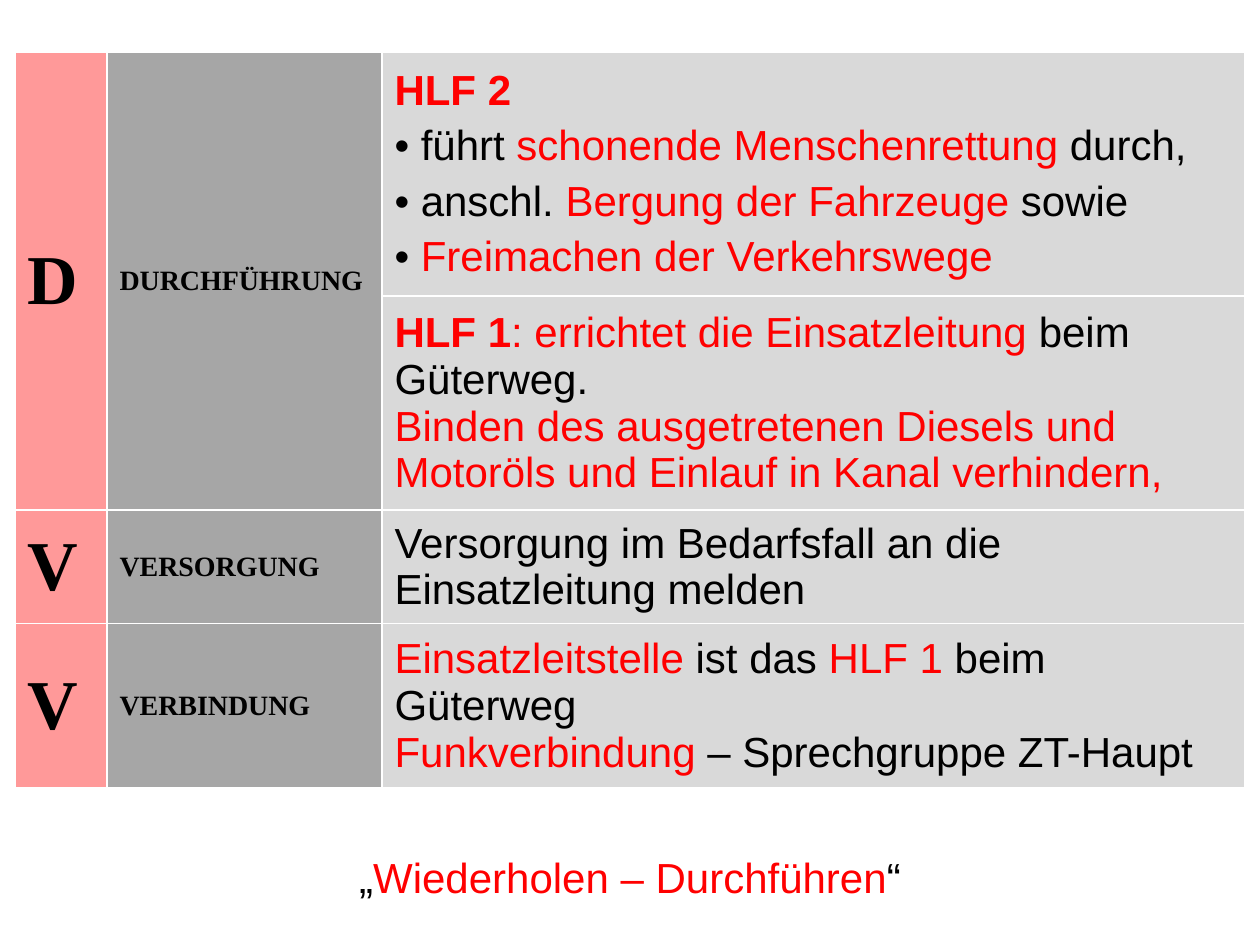
"""Build a slide with the execution, supply and communication parts of a fire service order."""
from dataclasses import dataclass, field

import pptx
import pptx.dml.color
import pptx.enum.text
import pptx.oxml
import pptx.oxml.ns
import pptx.util

EMU_PER_PX = 914400 / 126
COLORS = {
    "black": "000000",
    "red": "FF0000",
    "letter": "FF9999",
    "heading": "A6A6A6",
    "body": "D9D9D9",
    "border": "FFFFFF",
}
COL_WIDTHS = (92, 275, 863)
BORDER_PT = 1


@dataclass
class Run:
    text: str
    color: str = "black"
    bold: bool = False


@dataclass
class Para:
    runs: list[Run]
    bullet: bool = False
    before: float = 0


@dataclass
class Row:
    height: int
    paras: list[Para]
    letter: str = ""
    heading: str = ""
    span: int = 1


@dataclass
class Order:
    rows: list[Row] = field(default_factory=list)


ORDER = Order([
    Row(244, [
        Para([Run("HLF 2", "red", True)], before=4.8),
        Para([Run(" führt"), Run(" schonende Menschenrettung", "red"), Run(" durch,")], True, 4.8),
        Para([Run(" anschl. "), Run("Bergung der Fahrzeuge", "red"), Run(" sowie")], True, 4.8),
        Para([Run(" "), Run("Freimachen der Verkehrswege", "red")], True, 4.8),
    ], "D", "DURCHFÜHRUNG", 2),
    Row(214, [
        Para([
            Run("HLF 1", "red", True),
            Run(": errichtet die Einsatzleitung ", "red"),
            Run("beim Güterweg."),
            Run("\n"),
            Run("Binden des ausgetretenen Diesels und Motoröls und Einlauf in Kanal verhindern,", "red"),
        ]),
    ]),
    Row(113, [
        Para([Run("Versorgung im Bedarfsfall an die Einsatzleitung melden")]),
    ], "V", "VERSORGUNG"),
    Row(164, [
        Para([Run("Einsatzleitstelle", "red"), Run(" ist das "), Run("HLF 1 ", "red"),
              Run("beim Güterweg")], before=4.8),
        Para([Run("Funkverbindung ", "red"), Run("– Sprechgruppe ZT-Haupt")]),
    ], "V", "VERBINDUNG"),
])
CLOSING = [Run("„"), Run("Wiederholen – Durchführen", "red"), Run("“")]


def px(n: int) -> int:
    """Turn pixels into EMU."""
    return round(n * EMU_PER_PX)


def rgb(name: str) -> pptx.dml.color.RGBColor:
    """Look up a named colour."""
    return pptx.dml.color.RGBColor.from_string(COLORS[name])


def add_text(p, text: str, *, size: int = 24, font: str = "Arial",
             color: str = "black", bold: bool = False) -> None:
    """Append a formatted run, or a line break, to a paragraph."""
    if text == "\n":
        p.add_line_break()
        return
    r = p.add_run()
    r.text = text
    r.font.size = pptx.util.Pt(size)
    r.font.name = font
    r.font.bold = bold
    r.font.color.rgb = rgb(color)


def add_bullet(p) -> None:
    """Give a paragraph a round bullet without indent."""
    pPr = p._p.get_or_add_pPr()
    pPr.set("marL", "0")
    pPr.set("indent", "0")
    for tag, attr, value in (("a:buFont", "typeface", "Arial"), ("a:buChar", "char", "•")):
        el = pptx.oxml.ns.qn(tag)
        pPr.append(pPr.makeelement(el, {attr: value}))


def write_paras(tf, paras: list[Para]) -> None:
    """Fill a text frame with paragraphs."""
    for i, para in enumerate(paras):
        p = tf.add_paragraph() if i else tf.paragraphs[0]
        p.space_before = pptx.util.Pt(para.before)
        if para.bullet:
            add_bullet(p)
        for run in para.runs:
            add_text(p, run.text, color=run.color, bold=run.bold)


def style_cell(cell, fill: str) -> None:
    """Set the borders, fill and anchor of a cell."""
    tcPr = cell._tc.get_or_add_tcPr()
    for side in ("lnL", "lnR", "lnT", "lnB"):
        tcPr.append(pptx.oxml.parse_xml(
            f'<a:{side} {pptx.oxml.ns.nsdecls("a")} w="{pptx.util.Pt(BORDER_PT)}"><a:solidFill>'
            f'<a:srgbClr val="{COLORS["border"]}"/></a:solidFill></a:{side}>'))
    cell.fill.solid()
    cell.fill.fore_color.rgb = rgb(fill)
    cell.vertical_anchor = pptx.enum.text.MSO_ANCHOR.MIDDLE


def add_order(slide, order: Order, x: int, y: int) -> None:
    """Draw the order as a table."""
    height = sum(row.height for row in order.rows)
    tbl = slide.shapes.add_table(len(order.rows), len(COL_WIDTHS), px(x), px(y),
                                 px(sum(COL_WIDTHS)), px(height)).table
    tbl.first_row = tbl.horz_banding = False
    for col, width in zip(tbl.columns, COL_WIDTHS):
        col.width = px(width)
    for i, row in enumerate(order.rows):
        tbl.rows[i].height = px(row.height)
        for j, fill in enumerate(("letter", "heading", "body")):
            style_cell(tbl.cell(i, j), fill)
        for j, (text, size) in enumerate(((row.letter, 40), (row.heading, 16))):
            if text:
                cell = tbl.cell(i, j)
                add_text(cell.text_frame.paragraphs[0], text, size=size,
                         font="Times New Roman", bold=True)
                if row.span > 1:
                    cell.merge(tbl.cell(i + row.span - 1, j))
        write_paras(tbl.cell(i, 2).text_frame, row.paras)


def add_closing(slide, runs: list[Run], x: int, y: int, w: int, h: int) -> None:
    """Draw the centred closing line."""
    tf = slide.shapes.add_textbox(px(x), px(y), px(w), px(h)).text_frame
    tf.word_wrap = True
    write_paras(tf, [Para(runs)])
    tf.paragraphs[0].alignment = pptx.enum.text.PP_ALIGN.CENTER


def main() -> None:
    """Build and save the slide."""
    prs = pptx.Presentation()
    prs.slide_width, prs.slide_height = px(1260), px(945)
    slide = prs.slides.add_slide(prs.slide_layouts[6])
    add_closing(slide, CLOSING, 15, 845, 1230, 64)
    add_order(slide, ORDER, 15, 52)
    prs.save("out.pptx")


if __name__ == "__main__":
    main()
